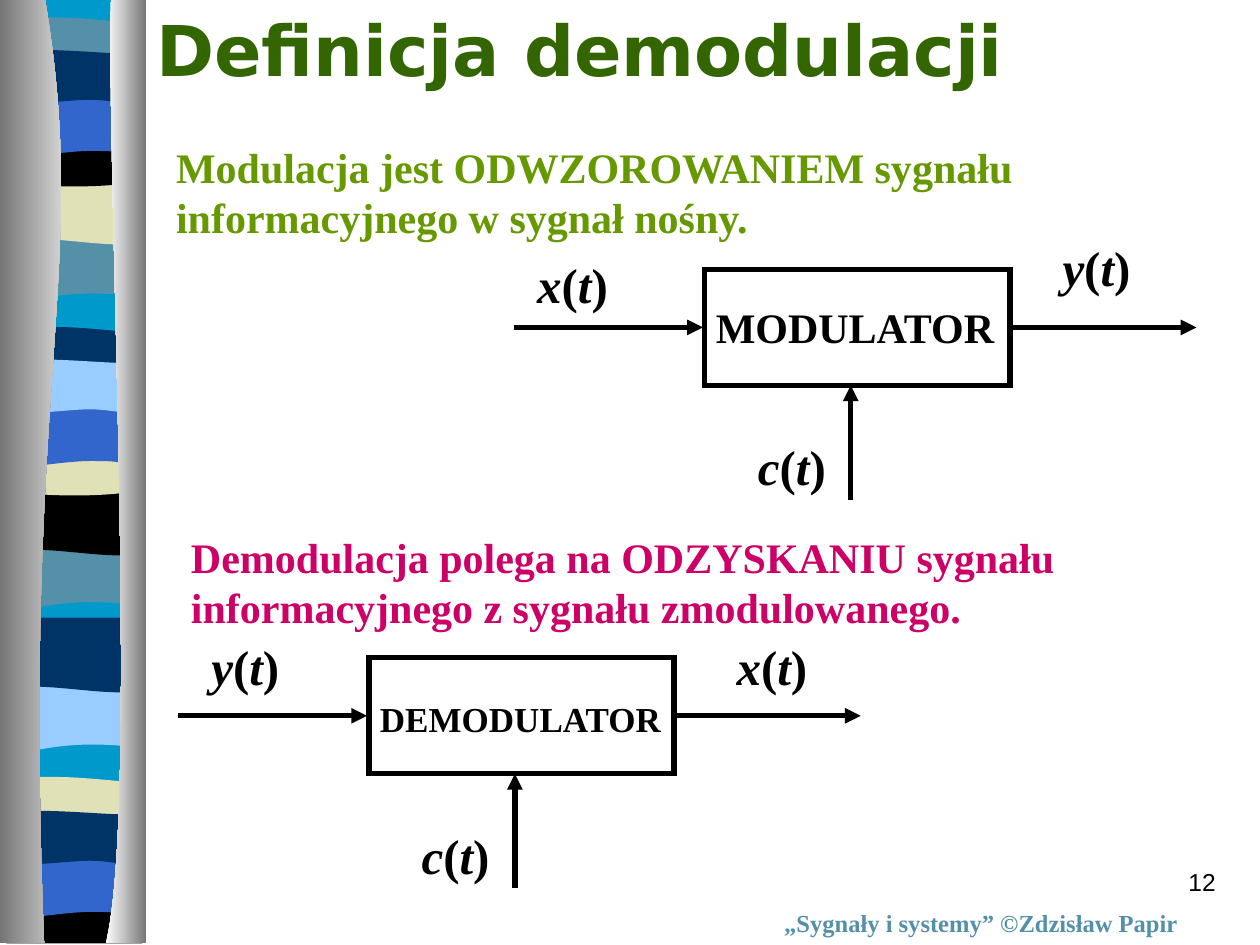
"""Builds a slide that defines demodulation with modulator and demodulator diagrams."""
import lxml.etree
import pptx
import pptx.dml.color
import pptx.enum.shapes
import pptx.enum.text
import pptx.oxml.ns
import pptx.util

Cm = pptx.util.Cm
RGBColor = pptx.dml.color.RGBColor
qn = pptx.oxml.ns.qn

BLACK = RGBColor(0x00, 0x00, 0x00)
WHITE = RGBColor(0xFF, 0xFF, 0xFF)
GREY = RGBColor(0x76, 0x76, 0x76)
CYAN = RGBColor(0x00, 0x99, 0xCC)
TEAL = RGBColor(0x54, 0x90, 0xA8)
NAVY = RGBColor(0x00, 0x33, 0x66)
BLUE = RGBColor(0x33, 0x66, 0xCC)
BEIGE = RGBColor(0xE1, 0xE1, 0xB7)
LIGHT_BLUE = RGBColor(0x99, 0xCC, 0xFF)
DARK_GREEN = RGBColor(0x33, 0x66, 0x00)
GREEN = RGBColor(0x66, 0x99, 0x00)
MAGENTA = RGBColor(0xCC, 0x00, 0x66)

SERIF = "Times New Roman"
STRIPE_LEFT = 0.13

presentation = pptx.Presentation()
presentation.slide_width = Cm(25.4)
presentation.slide_height = Cm(19.05)
slide = presentation.slides.add_slide(presentation.slide_layouts[5])


def add_outline(segments, left=0, top=0, stretch=1):
    """Draws a closed outline: one point is a line, three points are a cubic curve."""
    points = [(Cm(left + x), Cm(top + y * stretch)) for segment in segments for x, y in segment]
    builder = slide.shapes.build_freeform(*points[0])
    builder.add_line_segments(points[1:], close=True)
    shape = builder.convert_to_shape()
    lines = iter(list(shape._element.iter(qn("a:lnTo"))))
    for segment in segments[1:]:
        first, *others = [next(lines) for point in segment]
        if others:
            first.tag = qn("a:cubicBezTo")
            for other in others:
                first.append(other[0])
                other.getparent().remove(other)
    shape.shadow.inherit = False
    shape.line.fill.background()
    return shape


def add_text(left, top, width, height, lines, size, color, font=SERIF, bold=True, shape=None):
    """Writes lines of (text, italic) runs into a text box or a given placeholder."""
    if shape is None:
        shape = slide.shapes.add_textbox(0, 0, 0, 0)
    shape.left, shape.top, shape.width, shape.height = Cm(left), Cm(top), Cm(width), Cm(height)
    frame = shape.text_frame
    frame.word_wrap = False
    frame.auto_size = pptx.enum.text.MSO_AUTO_SIZE.NONE
    frame.vertical_anchor = pptx.enum.text.MSO_ANCHOR.TOP
    paragraph = frame.paragraphs[0]
    paragraph.alignment = pptx.enum.text.PP_ALIGN.LEFT
    for index, line in enumerate(lines):
        if index:
            paragraph.add_line_break()
        for text, italic in line:
            run = paragraph.add_run()
            run.text = text
            run.font.size = pptx.util.Pt(size)
            run.font.name = font
            run.font.bold = bold
            run.font.italic = italic
            run.font.color.rgb = color
    return shape


backing = [[(2.74, 0)], [(2.74, 18.97)], [(0, 18.97)], [(0, 0)]]
swell = [[(2.74, 0)], [(2.74, 1.19)], [(0.84, 0.99), (0.46, 1.4), (0, 1.19)], [(0, 0)]]
dip = [[(2.74, 0)], [(2.74, 1.19)], [(2.29, 1.39), (0.84, 1.06), (0, 1.19)], [(0, 0)]]
band = [[(2.74, 0.13)], [(2.74, 0.74)], [(2.29, 0.84), (0.46, 0.84), (0, 0.74)], [(0, 0.13)],
        [(0.18, 0), (0.58, 0.02), (1.04, 0.02)], [(1.52, 0.02), (2.39, 0.1), (2.74, 0.13)]]
strip = [[(2.74, 0)], [(2.74, 0.82)], [(2.29, 0.97), (0.46, 0.97), (0, 0.82)], [(0, 0)],
         [(1.7, 0.13), (2.16, 0), (2.74, 0)]]
foot = [[(2.74, 0)], [(2.74, 0.94)], [(0, 0.94)], [(0, 0)], [(1.7, 0.13), (2.16, 0), (2.74, 0)]]
arch = [[(2.74, 0)], [(2.74, 1.19)], [(2.31, 1.07), (2.13, 1.07), (1.68, 1.07)],
        [(1.22, 1.07), (0.41, 1.19), (0, 1.19)], [(0, 0)]]
ribbon = [[(2.74, 0.13)], [(2.74, 0.91)], [(2.57, 1.04), (2.16, 0.91), (1.68, 0.91)],
          [(1.22, 0.91), (0.28, 1.04), (0, 0.91)], [(0, 0.13)],
          [(0.38, 0), (1.85, 0.13), (2.31, 0.13)], [(2.77, 0.13), (2.64, 0.13), (2.74, 0.13)]]
stripes = [
    (backing, CYAN, 0, 1),
    (swell, TEAL, 4.56, 1.2), (dip, BEIGE, 3.42, 1.2), (band, TEAL, 0.33, 1.2),
    (strip, BLACK, 2.64, 1.2), (arch, BLUE, 1.76, 1.2), (ribbon, NAVY, 0.92, 1.2),
    (swell, TEAL, 10.78, 1.2), (dip, BLACK, 9.69, 1.2), (band, NAVY, 6.57, 1.2),
    (strip, BEIGE, 8.87, 1.2), (arch, BLUE, 8.01, 1.2), (ribbon, LIGHT_BLUE, 7.16, 1.2),
    (swell, LIGHT_BLUE, 13.65, 1.2), (dip, NAVY, 12.45, 1.2), (band, BEIGE, 15.64, 1.2),
    (foot, BLACK, 18.08, 1), (arch, BLUE, 17.1, 1.2), (ribbon, NAVY, 16.26, 1.2),
]
for segments, color, top, stretch in stripes:
    stripe = add_outline(segments, STRIPE_LEFT, top, stretch)
    stripe.fill.solid()
    stripe.fill.fore_color.rgb = color

curtains = [
    ([[(0.91, 0)], [(1.83, 5.49), (0.43, 7.52), (0.89, 19.02)], [(0, 19.02)], [(0, 0)]], (GREY, WHITE)),
    ([[(2.24, 0)], [(2.13, 3.18), (2.82, 16.41), (2.13, 19.02)], [(2.95, 19.02)], [(2.95, 0)]],
     (WHITE, GREY)),
]
for segments, colors in curtains:
    curtain = add_outline(segments)
    curtain.fill.gradient()
    curtain.fill.gradient_angle = 0
    for stop, position, color in zip(curtain.fill.gradient_stops, (0, 1), colors):
        stop.position = position
        stop.color.rgb = color

add_text(2.9, 0, 17.86, 1.96, [[("Definicja demodulacji", False)]], 40, DARK_GREEN,
         font="DejaVu Sans", shape=slide.shapes.title)
add_text(15.56, 18.19, 8.66, 0.86, [[("„Sygnały i systemy” ©Zdzisław Papir", False)]], 14, TEAL)
add_text(3.3, 2.72, 17.55, 2.31, [[("Modulacja jest ODWZOROWANIEM sygnału", False)],
                                  [("informacyjnego w sygnał nośny.", False)]], 24, GREEN)
add_text(3.6, 10.59, 18.31, 2.31, [[("Demodulacja polega na ODZYSKANIU sygnału", False)],
                                   [("informacyjnego z sygnału zmodulowanego.", False)]], 24, MAGENTA)

diagrams = [
    (14.21, 5.43, "MODULATOR", 24, 0.53,
     [("x", -3.63, -0.43), ("y", 6.96, -0.77), ("c", 0.82, 3.25)]),
    (7.44, 13.26, "DEMODULATOR", 20, 0.68,
     [("y", -3.43, -0.56), ("x", 7.16, -0.56), ("c", 0.81, 3.25)]),
]
arrows = [(-3.85, 1.17, -0.04, 1.17), (2.94, 4.65, 2.94, 2.34), (6.1, 1.17, 9.91, 1.17)]
for left, top, name, name_size, name_top, signals in diagrams:
    block = slide.shapes.add_shape(pptx.enum.shapes.MSO_SHAPE.RECTANGLE,
                                   Cm(left), Cm(top), Cm(6.15), Cm(2.34))
    block.shadow.inherit = False
    block.fill.background()
    block.line.color.rgb = BLACK
    block.line.width = pptx.util.Pt(3)
    lxml.etree.SubElement(block.line._get_or_add_ln(), qn("a:miter"), lim="800000")
    add_text(left - 0.03, top + name_top, 6.22, 1.2, [[(name, False)]], name_size, BLACK)
    for x1, y1, x2, y2 in arrows:
        arrow = slide.shapes.add_connector(pptx.enum.shapes.MSO_CONNECTOR.STRAIGHT, Cm(left + x1),
                                           Cm(top + y1), Cm(left + x2), Cm(top + y2))
        arrow.line.color.rgb = BLACK
        arrow.line.width = pptx.util.Pt(3)
        line = arrow.line._get_or_add_ln()
        lxml.etree.SubElement(line, qn("a:tailEnd"), type="triangle")
        lxml.etree.SubElement(line.getparent(), qn("a:effectLst"))
    for signal, dx, dy in signals:
        runs = [(signal, True), ("(", False), ("t", True), (")", False)]
        add_text(left + dx, top + dy, 1.9, 1.45, [runs], 28, BLACK)

page_number = add_text(19.48, 17.35, 5.28, 1.27, [[("12", False)]], 14, BLACK, font="Arial", bold=False)
page_number.text_frame.word_wrap = True
page_number.text_frame.paragraphs[0].alignment = pptx.enum.text.PP_ALIGN.RIGHT

presentation.save("out.pptx")
